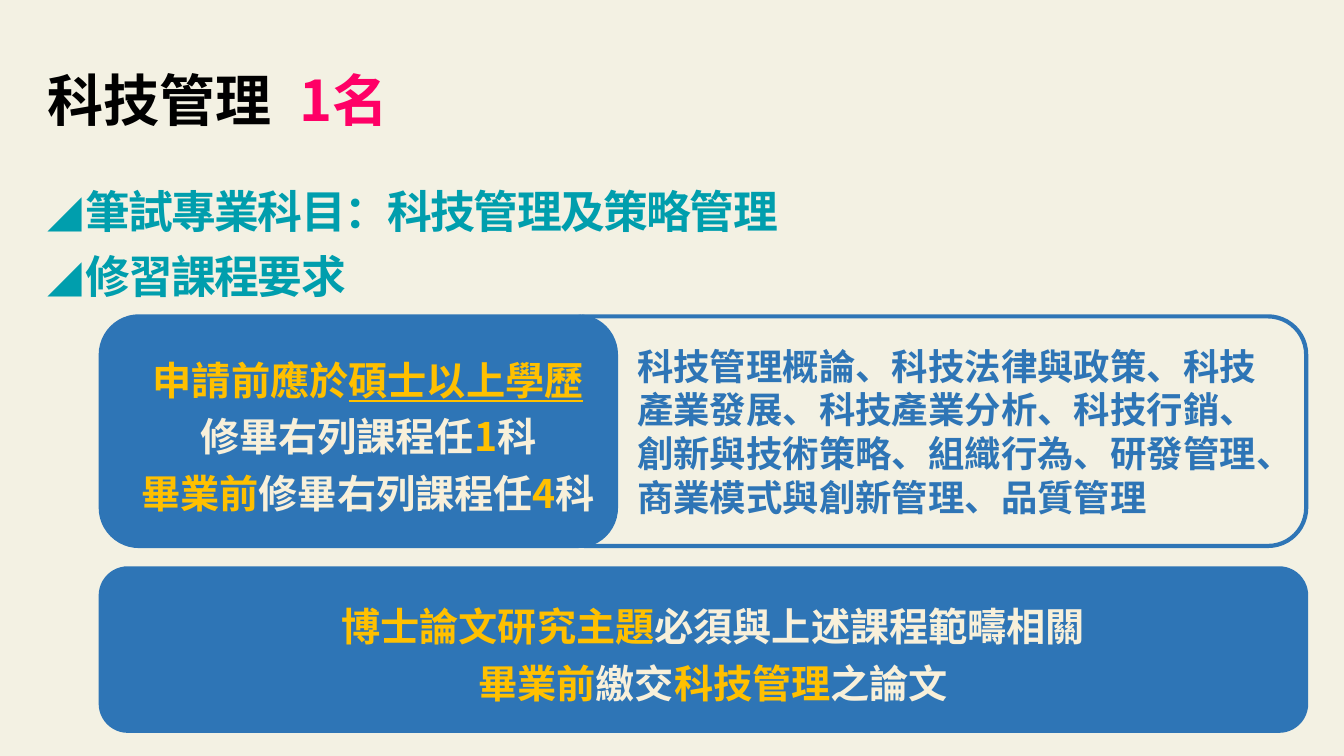
"""Build the slide on the technology management admission requirements."""
from lxml import etree
from pptx import Presentation
from pptx.dml.color import RGBColor
from pptx.enum.shapes import MSO_SHAPE
from pptx.enum.text import MSO_ANCHOR, MSO_AUTO_SIZE, PP_ALIGN
from pptx.oxml.ns import qn
from pptx.util import Pt

FONT = "Noto Sans CJK SC"
BLUE, GOLD, CREAM = "2E75B6", "FFC000", "F8F0DA"
TEAL, PINK, BLACK, PAPER = "009EAD", "FF0066", "000000", "F3F1E3"


def rgb(value):
    return RGBColor.from_string(value)


def apply(obj, formats):
    for name, value in formats.items():
        setattr(obj, name, value)


def add_run(p, text, size, color, underline=None, spacing=None):
    r = p.add_run()
    r.text = text
    apply(r.font, {"name": FONT, "size": Pt(size), "bold": True, "underline": underline})
    r.font.color.rgb = rgb(color)
    rPr = r.font._element
    etree.SubElement(rPr, qn("a:ea")).set("typeface", FONT)
    if spacing:
        rPr.set("spc", str(round(spacing * 100)))


def add_paragraphs(tf, lines, size, spacing=None, **formats):
    for i, line in enumerate(lines):
        p = tf.add_paragraph() if i else tf.paragraphs[0]
        apply(p, {"space_before": Pt(0), **formats})
        for text, color, *underline in line:
            add_run(p, text, size, color, *underline, spacing=spacing)


def place(sp, left, top, width, height):
    apply(sp, {"left": Pt(left), "top": Pt(top), "width": Pt(width), "height": Pt(height)})


def set_indent(p, left, first=0):
    pPr = p._p.get_or_add_pPr()
    pPr.set("marL", str(Pt(left)))
    pPr.set("indent", str(Pt(first)))
    return pPr


def fill_title(sp):
    place(sp, 26.6, 41.8, 844.6, 58.3)
    tf = sp.text_frame
    apply(tf, {"vertical_anchor": MSO_ANCHOR.MIDDLE, "auto_size": MSO_AUTO_SIZE.NONE})
    line = [("科技管理\t", BLACK), ("1名", PINK)]
    add_paragraphs(tf, [line], 40, alignment=PP_ALIGN.LEFT)
    tabs = etree.SubElement(set_indent(tf.paragraphs[0], 0), qn("a:tabLst"))
    etree.SubElement(tabs, qn("a:tab"), pos=str(Pt(187)), algn="l")


def fill_body(sp):
    place(sp, 26.6, 120.2, 880.6, 142.6)
    tf = sp.text_frame
    apply(tf, {"vertical_anchor": MSO_ANCHOR.TOP, "auto_size": MSO_AUTO_SIZE.NONE})
    lines = [[("筆試專業科目：科技管理及策略管理", TEAL)], [("修習課程要求", TEAL)]]
    add_paragraphs(tf, lines, 32, spacing=-1.2, line_spacing=1.2)
    for p in tf.paragraphs:
        etree.SubElement(set_indent(p, 27, -27), qn("a:buChar")).set("char", "◢")


def add_box(slide, box, lines, size, filled=True, **formats):
    sp = slide.shapes.add_shape(MSO_SHAPE.ROUNDED_RECTANGLE, *map(Pt, box))
    sp.shadow.inherit = False
    if filled:
        sp.fill.solid()
        sp.fill.fore_color.rgb = rgb(BLUE)
    else:
        sp.fill.background()
    sp.line.color.rgb = rgb(BLUE)
    sp.line.width = Pt(3)
    tf = sp.text_frame
    apply(tf, {"word_wrap": True, "vertical_anchor": MSO_ANCHOR.MIDDLE,
               "margin_left": Pt(20), "margin_right": Pt(6),
               "margin_top": Pt(6), "margin_bottom": Pt(6)})
    add_paragraphs(tf, lines, size, **formats)
    return sp


def main():
    prs = Presentation()
    apply(prs, {"slide_width": Pt(960), "slide_height": Pt(540)})
    slide = prs.slides.add_slide(prs.slide_layouts[1])
    slide.background.fill.solid()
    slide.background.fill.fore_color.rgb = rgb(PAPER)
    fill_title(slide.shapes.title)
    fill_body(slide.placeholders[1])

    courses = ("科技管理概論、科技法律與政策、科技產業發展、科技產業分析、科技行銷、"
               "創新與技術策略、組織行為、研發管理、商業模式與創新管理、品質管理")
    sp = add_box(slide, (391, 226, 542, 164), [[(courses, BLUE)]], 26,
                 filled=False, alignment=PP_ALIGN.LEFT)
    set_indent(sp.text_frame.paragraphs[0], 36)

    centred = {"alignment": PP_ALIGN.CENTER, "line_spacing": 1.2}
    rules = [
        [("申請前應於", GOLD), ("碩士以上學歷", GOLD, True),
         ("修畢右列課程任", CREAM), ("1", GOLD), ("科", CREAM)],
        [("畢業前", GOLD), ("修畢右列課程任", CREAM), ("4", GOLD), ("科", CREAM)],
    ]
    add_box(slide, (72, 226, 368, 164), rules, 28, **centred)
    thesis = [
        [("博士論文研究主題", GOLD), ("必須與上述課程範疇相關", CREAM)],
        [("畢業前", GOLD), ("繳交", CREAM), ("科技管理", GOLD), ("之論文", CREAM)],
    ]
    add_box(slide, (72, 406, 861, 116), thesis, 28, **centred)
    prs.save("out.pptx")


if __name__ == "__main__":
    main()
